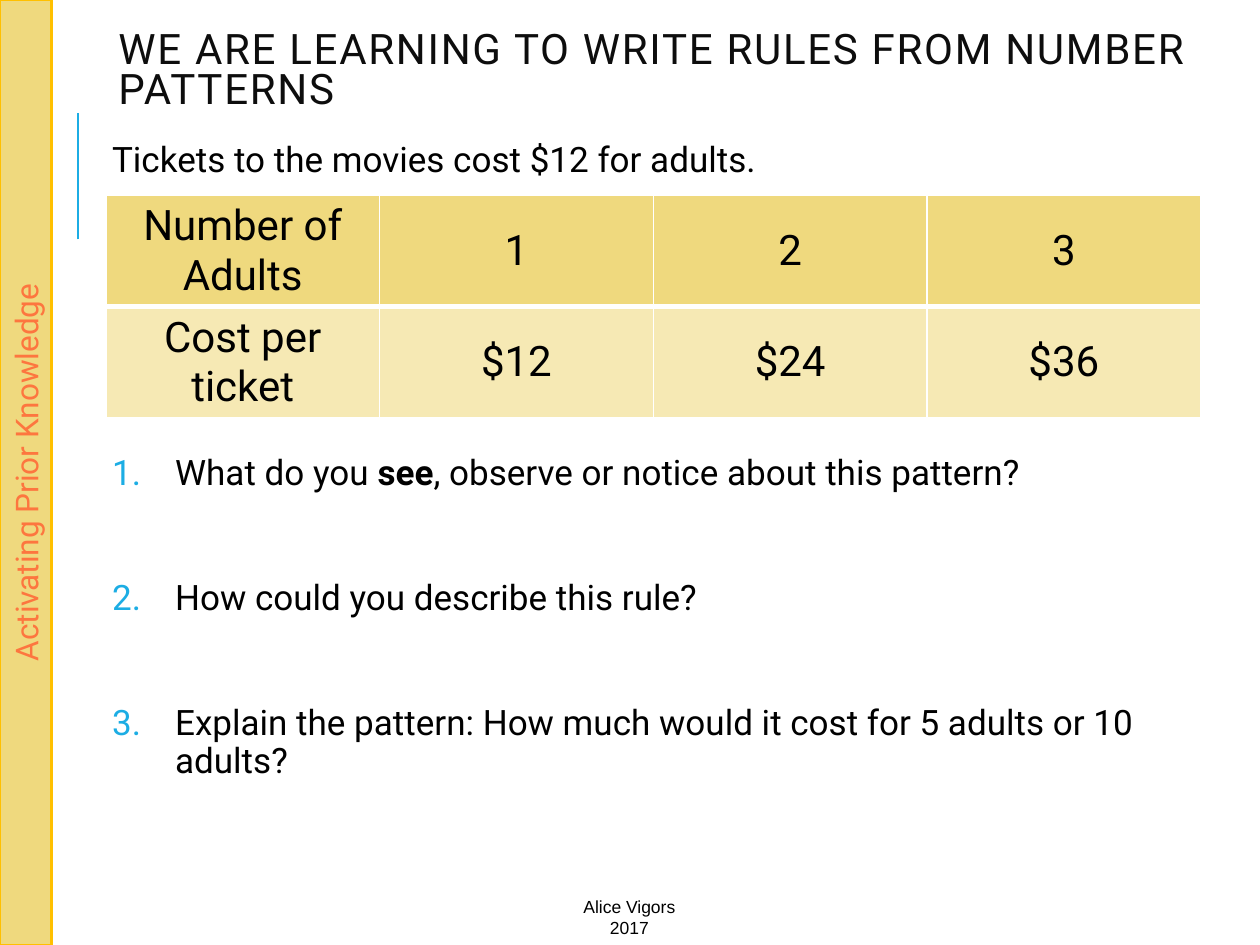
from lxml import etree
from pptx import Presentation
from pptx.dml.color import RGBColor
from pptx.enum.shapes import MSO_CONNECTOR, MSO_SHAPE
from pptx.enum.text import MSO_ANCHOR, MSO_AUTO_SIZE, PP_ALIGN
from pptx.oxml.ns import qn
from pptx.util import Inches, Pt

LEFT, CENTER = PP_ALIGN.LEFT, PP_ALIGN.CENTER
TOP, MIDDLE = MSO_ANCHOR.TOP, MSO_ANCHOR.MIDDLE
NO_AUTOFIT = MSO_AUTO_SIZE.NONE
RECTANGLE, STRAIGHT = MSO_SHAPE.RECTANGLE, MSO_CONNECTOR.STRAIGHT

WIDTH, HEIGHT = 10, 7.5
MARGIN, CONTENT_WIDTH = 0.84, 8.77
GOLD, PALE_GOLD, AMBER = "EFD97E", "F6E9B4", "FFC000"
BLUE, ORANGE, WHITE, BLACK = "1CADE4", "FD763F", "FFFFFF", "000000"

TICKETS = [
    ["Number of Adults", "1", "2", "3"],
    ["Cost per ticket", "$12", "$24", "$36"],
]
QUESTIONS = [
    ["What do you ", "see", ", observe or notice about this pattern?"],
    ["How could you describe this rule?"],
    ["Explain the pattern: How much would it cost for 5 adults or 10 adults?"],
]


def color(value):
    """Turn a hex string into a colour."""
    return RGBColor.from_string(value)


def place(shape, left, top, width, height):
    """Move and size a shape in inches."""
    shape.left, shape.top = Inches(left), Inches(top)
    shape.width, shape.height = Inches(width), Inches(height)


def set_frame(frame, anchor=TOP, inset=None):
    """Set wrapping, anchor and optional equal insets of a text frame."""
    frame.word_wrap = True
    frame.auto_size = NO_AUTOFIT
    frame.vertical_anchor = anchor
    if inset is not None:
        frame.margin_left = frame.margin_right = Inches(inset)
        frame.margin_top = frame.margin_bottom = Inches(inset)


def write(paragraph, *parts, size=20, ink=BLACK, font="Roboto", align=LEFT,
          bold_part=None, leading=None, before=0, after=0, tracking=None):
    """Write text parts into a paragraph with one format."""
    paragraph.alignment = align
    paragraph.space_before, paragraph.space_after = Pt(before), Pt(after)
    if leading:
        paragraph.line_spacing = leading
    for part in parts:
        run = paragraph.add_run()
        run.text = part
        run.font.name, run.font.size = font, Pt(size)
        run.font.bold = part == bold_part
        run.font.color.rgb = color(ink)
        if tracking:
            run.font._element.set("spc", str(tracking * 100))


def number(paragraph, indent=0.5):
    """Give a paragraph a blue automatic number with a hanging indent."""
    properties = paragraph._p.get_or_add_pPr()
    properties.set("marL", str(Inches(indent)))
    properties.set("indent", str(-Inches(indent)))
    bullet_color = etree.SubElement(properties, qn("a:buClr"))
    etree.SubElement(bullet_color, qn("a:srgbClr"), val=BLUE)
    etree.SubElement(properties, qn("a:buFont"), typeface="+mj-lt")
    etree.SubElement(properties, qn("a:buAutoNum"), type="arabicPeriod")


def add_title(slide, text):
    """Fill the title placeholder."""
    title = slide.shapes.title
    place(title, MARGIN, 0.18, CONTENT_WIDTH, 0.79)
    set_frame(title.text_frame, MIDDLE)
    write(title.text_frame.paragraphs[0], text, size=24, ink="0D0D0D",
          leading=0.8, tracking=1)


def add_accent_line(slide):
    """Draw the blue upright line beside the title."""
    x = Inches(0.62)
    accent = slide.shapes.add_connector(STRAIGHT, x, Inches(1.9), x, Inches(0.9))
    accent.line.color.rgb = color(BLUE)
    accent.line.width = Pt(1.5)
    etree.SubElement(accent._element.spPr, qn("a:effectLst"))


def add_sidebar(slide, text):
    """Draw the full-height band with upward text."""
    band = slide.shapes.add_shape(RECTANGLE, 0, 0, Inches(0.41), Inches(HEIGHT))
    band.shadow.inherit = False
    band.fill.solid()
    band.fill.fore_color.rgb = color(GOLD)
    band.line.color.rgb = color(AMBER)
    band.line.width = Pt(1.25)
    set_frame(band.text_frame, MIDDLE)
    band.text_frame._txBody.bodyPr.set("vert", "vert270")
    write(band.text_frame.paragraphs[0], text, size=18, ink=ORANGE, align=CENTER)


def add_textbox(slide, left, top, width, height, **frame_format):
    """Add a text box and return its text frame."""
    box = slide.shapes.add_textbox(0, 0, 0, 0)
    place(box, left, top, width, height)
    set_frame(box.text_frame, **frame_format)
    return box.text_frame


def add_lesson(slide):
    """Write the introduction and the numbered questions around the table."""
    lesson = add_textbox(slide, MARGIN, 1.08, CONTENT_WIDTH, 5.9, inset=0.05)
    write(lesson.paragraphs[0], "Tickets to the movies cost $12 for adults.",
          leading=0.9, before=12, after=2)
    for index, parts in enumerate(QUESTIONS):
        question = lesson.add_paragraph()
        write(question, *parts, bold_part="see", leading=0.9,
              before=48 if index else 155, after=2)
        number(question)


def set_borders(cell, **widths):
    """Draw white cell borders with the given widths in points."""
    properties = cell._tc.get_or_add_tcPr()
    for index, side in enumerate("LRTB"):
        border = etree.Element(qn("a:ln" + side), w=str(Pt(widths.get(side, 1))))
        fill = etree.SubElement(border, qn("a:solidFill"))
        etree.SubElement(fill, qn("a:srgbClr"), val=WHITE)
        properties.insert(index, border)


def add_ticket_table(slide):
    """Add the table of ticket costs."""
    rows, columns = len(TICKETS), len(TICKETS[0])
    table = slide.shapes.add_table(
        rows, columns, Inches(MARGIN), Inches(1.55),
        Inches(8.69), Inches(0.88 * rows)).table
    styles = [(GOLD, {"B": 3}), (PALE_GOLD, {"T": 3})]
    for r, (values, (shade, borders)) in enumerate(zip(TICKETS, styles)):
        for c, value in enumerate(values):
            cell = table.cell(r, c)
            cell.fill.solid()
            cell.fill.fore_color.rgb = color(shade)
            cell.vertical_anchor = MIDDLE
            set_borders(cell, **borders)
            write(cell.text_frame.paragraphs[0], value, size=24, align=CENTER)


def main():
    """Build and save the slide."""
    deck = Presentation()
    deck.slide_width, deck.slide_height = Inches(WIDTH), Inches(HEIGHT)
    slide = deck.slides.add_slide(deck.slide_layouts[5])
    add_accent_line(slide)
    add_lesson(slide)
    add_title(slide, "WE ARE LEARNING TO WRITE RULES FROM NUMBER PATTERNS")
    add_sidebar(slide, "Activating Prior Knowledge")
    add_ticket_table(slide)
    credit = add_textbox(slide, 4.46, 7.06, 1.07, 0.44)
    write(credit.paragraphs[0], "Alice Vigors 2017", size=10, font="Arial",
          align=CENTER)
    deck.save("out.pptx")


if __name__ == "__main__":
    main()
